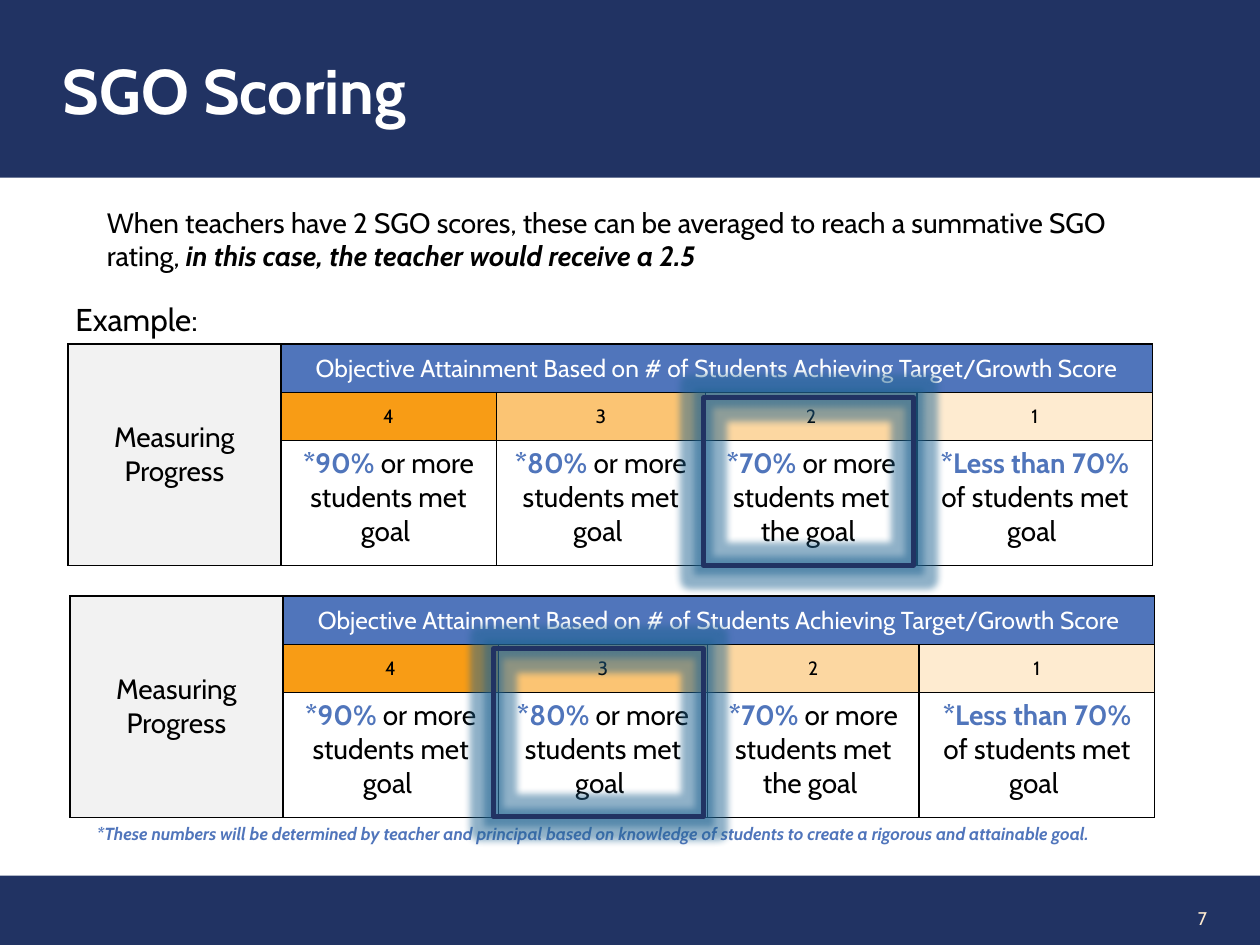
from dataclasses import dataclass

from lxml import etree
from pptx import Presentation
from pptx.dml.color import RGBColor
from pptx.enum.shapes import MSO_SHAPE
from pptx.enum.text import MSO_ANCHOR, PP_ALIGN
from pptx.oxml.ns import qn
from pptx.util import Pt

RECT = MSO_SHAPE.RECTANGLE
TOP, MIDDLE = MSO_ANCHOR.TOP, MSO_ANCHOR.MIDDLE
LEFT, CENTER, RIGHT = PP_ALIGN.LEFT, PP_ALIGN.CENTER, PP_ALIGN.RIGHT


@dataclass(frozen=True)
class Theme:
    font: str = "Cabin"
    navy: str = "213363"
    blue: str = "5075BB"
    glow: str = "1F6391"
    black: str = "000000"
    white: str = "FFFFFF"
    grey: str = "F2F2F2"
    cream: str = "FEEBD0"
    scores: tuple = ("F89C15", "FBC473", "FCD7A1", "FEEBD0")
    title: float = 36
    label: float = 18
    body: float = 16
    header: float = 14
    score: float = 11
    number: float = 10.5
    note: float = 10


T = Theme()
INSETS = (7.2, 3.6, 7.2, 3.6)
TIGHT = (5, 0, 5, 0)
COLS = (121.7, 123.1, 119.5, 121, 134.6)
ROWS = (27.8, 27.4, 71.5)
GOALS = (
    ("*90% ", "or more students met goal "),
    ("*80% ", "or more students met goal "),
    ("*70% ", "or more students met the goal "),
    ("*Less than 70% ", "of students met goal "),
)


def rgb(value):
    return RGBColor.from_string(value)


def add_runs(p, runs, size, align=LEFT):
    """Each run is (text, colour, bold, italic)."""
    p.alignment = align
    for text, color, bold, italic in runs:
        r = p.add_run()
        r.text = text
        r.font.name = T.font
        r.font.size = Pt(size)
        r.font.color.rgb = rgb(color)
        r.font.bold = bold
        r.font.italic = italic


def set_insets(target, insets):
    (target.margin_left, target.margin_top,
     target.margin_right, target.margin_bottom) = map(Pt, insets)


def add_text(s, box, runs, size, align=LEFT, anchor=TOP, wrap=True):
    tf = s.shapes.add_textbox(*map(Pt, box)).text_frame
    tf.word_wrap = wrap
    tf.vertical_anchor = anchor
    add_runs(tf.paragraphs[0], runs, size, align)


def add_band(s, box):
    sp = s.shapes.add_shape(RECT, *map(Pt, box))
    sp.shadow.inherit = False
    sp.fill.solid()
    sp.fill.fore_color.rgb = rgb(T.navy)
    sp.line.fill.background()
    return sp


def add_highlight(s, box):
    sp = s.shapes.add_shape(RECT, *map(Pt, box))
    sp.shadow.inherit = False
    sp.fill.background()
    sp.line.color.rgb = rgb(T.navy)
    sp.line.width = Pt(3)
    effects = sp._element.spPr.find(qn("a:effectLst"))
    glow = etree.SubElement(effects, qn("a:glow"), rad=str(Pt(8)))
    color = etree.SubElement(glow, qn("a:srgbClr"), val=T.glow)
    etree.SubElement(color, qn("a:alpha"), val="50000")


def add_borders(cell):
    tcPr = cell._tc.get_or_add_tcPr()
    for i, side in enumerate(("lnL", "lnR", "lnT", "lnB")):
        ln = etree.Element(qn(f"a:{side}"), w=str(Pt(1)))
        fill = etree.SubElement(ln, qn("a:solidFill"))
        etree.SubElement(fill, qn("a:srgbClr"), val=T.black)
        tcPr.insert(i, ln)


def fill_cell(cell, runs, size, fill, anchor=MIDDLE, insets=INSETS):
    cell.fill.solid()
    cell.fill.fore_color.rgb = rgb(fill)
    cell.vertical_anchor = anchor
    set_insets(cell, insets)
    add_runs(cell.text_frame.paragraphs[0], runs, size, CENTER)


def add_score_table(s, left, top):
    frame = s.shapes.add_table(len(ROWS), len(COLS), Pt(left), Pt(top),
                               Pt(sum(COLS)), Pt(sum(ROWS)))
    table = frame.table
    for col, width in zip(table.columns, COLS):
        col.width = Pt(width)
    for row, height in zip(table.rows, ROWS):
        row.height = Pt(height)

    # Merged row label and heading
    table.cell(0, 0).merge(table.cell(2, 0))
    table.cell(0, 1).merge(table.cell(0, 4))
    fill_cell(table.cell(0, 0), [("Measuring Progress", T.black, False, False)],
              T.body, T.grey)
    heading = "Objective Attainment Based on # of Students Achieving Target/Growth Score"
    fill_cell(table.cell(0, 1), [(heading, T.white, False, False)],
              T.header, T.blue, insets=TIGHT)

    # Scores from 4 down to 1, each above its goal
    for i, (share, rest) in enumerate(GOALS):
        fill_cell(table.cell(1, i + 1), [(str(4 - i), T.black, False, False)],
                  T.score, T.scores[i], insets=TIGHT)
        fill_cell(table.cell(2, i + 1),
                  [(share, T.blue, True, False), (rest, T.black, False, False)],
                  T.body, T.white, TOP)
    for cell in table.iter_cells():
        add_borders(cell)


def main():
    prs = Presentation()
    prs.slide_width, prs.slide_height = Pt(720), Pt(540)
    s = prs.slides.add_slide(prs.slide_layouts[6])

    # Footer and slide number
    add_band(s, (0, 500.4, 720, 39.6))
    add_text(s, (591.8, 510.5, 105.1, 28.8), [("7", T.cream, False, False)],
             T.number, RIGHT, MIDDLE)

    # Title band
    tf = add_band(s, (0, 0, 720, 101.5)).text_frame
    tf.vertical_anchor = MIDDLE
    set_insets(tf, (36, 3.6, 7.2, 3.6))
    add_runs(tf.paragraphs[0], [("SGO Scoring", T.white, True, False)], T.title)

    # Score tables and footnote
    add_score_table(s, 38.8, 196.6)
    add_score_table(s, 40, 340.6)
    note = ("*These numbers will be determined by teacher and principal based on "
            "knowledge of students to create a rigorous and attainable goal.")
    add_text(s, (48.2, 466.6, 595.4, 19.4), [(note, T.blue, True, True)],
             T.note, wrap=False)

    # Frames around the scores reached
    for left, top in ((402, 227.3), (282, 370.8)):
        add_highlight(s, (left, top, 120.2, 95.8))

    # Introduction
    intro = ("When teachers have 2 SGO scores, these can be averaged to reach "
             "a summative SGO rating, ")
    add_text(s, (54, 113.8, 599.8, 46.1),
             [(intro, T.black, False, False),
              ("in this case, the teacher would receive a 2.5", T.black, True, True)],
             T.body)
    add_text(s, (36, 167.8, 84.2, 28.8), [("Example:", T.black, False, False)],
             T.label, wrap=False)

    prs.save("out.pptx")


if __name__ == "__main__":
    main()
